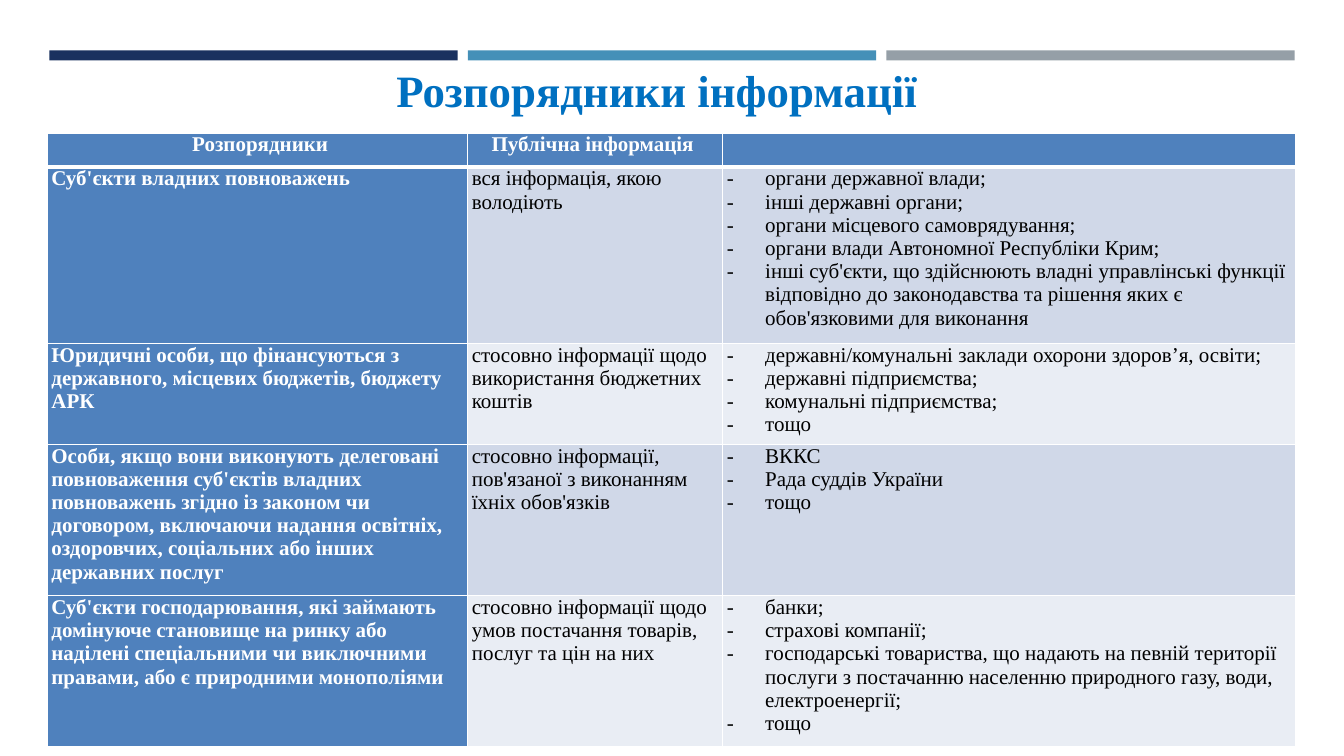
import pptx
import pptx.dml.color
import pptx.enum.shapes
import pptx.enum.text
import pptx.util
from dataclasses import dataclass
from lxml import etree

PX = 9144  # EMU in one px, 100 px to the inch
A = "http://schemas.openxmlformats.org/drawingml/2006/main"
ALIGN = pptx.enum.text.PP_ALIGN


@dataclass(frozen=True)
class Theme:
    font: str = "Times New Roman"
    title_size: int = 32
    table_size: int = 15
    title: str = "0070C0"
    bars: tuple = ("1A315F", "4590B8", "959FA7")
    strong: str = "4F81BD"
    bands: tuple = ("D0D8E8", "E9EDF4")
    white: str = "FFFFFF"
    black: str = "000000"


theme = Theme()


def write(para, text, size, color, bold, align):
    para.alignment = align
    span = para.add_run()
    span.text = text
    span.font.name = theme.font
    span.font.size = pptx.util.Pt(size)
    span.font.bold = bold
    span.font.color.rgb = pptx.dml.color.RGBColor.from_string(color)


def style_cell(cell, fill, top, bottom):
    cell.margin_left = cell.margin_right = 4 * PX
    cell.margin_top = cell.margin_bottom = 0
    props = cell._tc.get_or_add_tcPr()
    for side, points in (("L", 1), ("R", 1), ("T", top), ("B", bottom)):
        line = etree.SubElement(props, f"{{{A}}}ln{side}", w=str(pptx.util.Pt(points)))
        solid = etree.SubElement(line, f"{{{A}}}solidFill")
        etree.SubElement(solid, f"{{{A}}}srgbClr", val=theme.white)
    cell.fill.solid()
    cell.fill.fore_color.rgb = pptx.dml.color.RGBColor.from_string(fill)


deck = pptx.Presentation()
deck.slide_width, deck.slide_height = 1333 * PX, 750 * PX
page = deck.slides.add_slide(deck.slide_layouts[6])

# Three bars along the top
for index, color in enumerate(theme.bars):
    bar = page.shapes.add_shape(
        pptx.enum.shapes.MSO_SHAPE.RECTANGLE,
        (49 + 415 * index) * PX, 50 * PX, 405 * PX, 10 * PX)
    bar.shadow.inherit = False
    bar.fill.solid()
    bar.fill.fore_color.rgb = pptx.dml.color.RGBColor.from_string(color)
    bar.line.fill.background()

# Title
box = page.shapes.add_textbox(85 * PX, 70 * PX, 1133 * PX, 45 * PX)
frame = box.text_frame
frame.word_wrap = True
frame.margin_left = frame.margin_right = frame.margin_top = frame.margin_bottom = 0
frame.vertical_anchor = pptx.enum.text.MSO_ANCHOR.MIDDLE
frame.paragraphs[0].line_spacing = 0.9
write(frame.paragraphs[0], "Розпорядники інформації", theme.title_size, theme.title, True, ALIGN.CENTER)

# Table content: holder, information, examples
headings = (" Розпорядники", "Публічна інформація ", "")
holders = (
    ("Суб'єкти владних повноважень",
     "вся інформація, якою володіють",
     ("органи державної влади;",
      "інші державні органи;",
      "органи місцевого самоврядування;",
      "органи влади Автономної Республіки Крим;",
      "інші суб'єкти, що здійснюють владні управлінські функції відповідно до "
      "законодавства та рішення яких є обов'язковими для виконання"),
     ALIGN.LEFT),
    ("Юридичні особи, що фінансуються з державного, місцевих бюджетів, бюджету АРК",
     "стосовно інформації щодо використання бюджетних коштів",
     ("державні/комунальні заклади охорони здоров’я, освіти;",
      "державні підприємства;",
      "комунальні підприємства;",
      "тощо"),
     ALIGN.JUSTIFY),
    ("Особи, якщо вони виконують делеговані повноваження суб'єктів владних "
     "повноважень згідно із законом чи договором, включаючи надання освітніх, "
     "оздоровчих, соціальних або інших державних послуг",
     "стосовно інформації, пов'язаної з виконанням їхніх обов'язків",
     ("ВККС", "Рада суддів України", "тощо"),
     ALIGN.LEFT),
    ("Суб'єкти господарювання, які займають домінуюче становище на ринку або "
     "наділені спеціальними чи виключними правами, або є природними монополіями",
     "стосовно інформації щодо умов постачання товарів, послуг та цін на них",
     ("банки;",
      "страхові компанії;",
      "господарські товариства, що надають на певній території послуги з "
      "постачанню населенню природного газу, води, електроенергії;",
      "тощо"),
     ALIGN.LEFT),
)

# Table grid
widths = (417, 253, 568)
heights = (34, 175, 100, 150, 150)
table = page.shapes.add_table(
    len(heights), len(widths), 47 * PX, 132 * PX, sum(widths) * PX, sum(heights) * PX).table
table.first_row = table.horz_banding = False
for column, width in zip(table.columns, widths):
    column.width = width * PX
for row, height in zip(table.rows, heights):
    row.height = height * PX

# Header row
for column, heading in enumerate(headings):
    cell = table.cell(0, column)
    style_cell(cell, theme.strong, 1, 3)
    if heading:
        write(cell.text_frame.paragraphs[0], heading, theme.table_size, theme.white, True, ALIGN.CENTER)

# Body rows
for row, (holder, information, examples, align) in enumerate(holders, 1):
    band = theme.bands[(row - 1) % 2]
    for column, fill in enumerate((theme.strong, band, band)):
        style_cell(table.cell(row, column), fill, 3 if row == 1 else 1, 1)
    write(table.cell(row, 0).text_frame.paragraphs[0], holder,
          theme.table_size, theme.white, True, ALIGN.LEFT)
    write(table.cell(row, 1).text_frame.paragraphs[0], information,
          theme.table_size, theme.black, False, ALIGN.LEFT)
    frame = table.cell(row, 2).text_frame
    for index, example in enumerate(examples):
        para = frame.add_paragraph() if index else frame.paragraphs[0]
        write(para, example, theme.table_size, theme.black, False, align)
        props = para._p.get_or_add_pPr()
        props.set("marL", str(38 * PX))
        props.set("indent", str(-38 * PX))
        etree.SubElement(props, f"{{{A}}}buFont", typeface=theme.font)
        etree.SubElement(props, f"{{{A}}}buChar", char="-")

deck.save("out.pptx")
